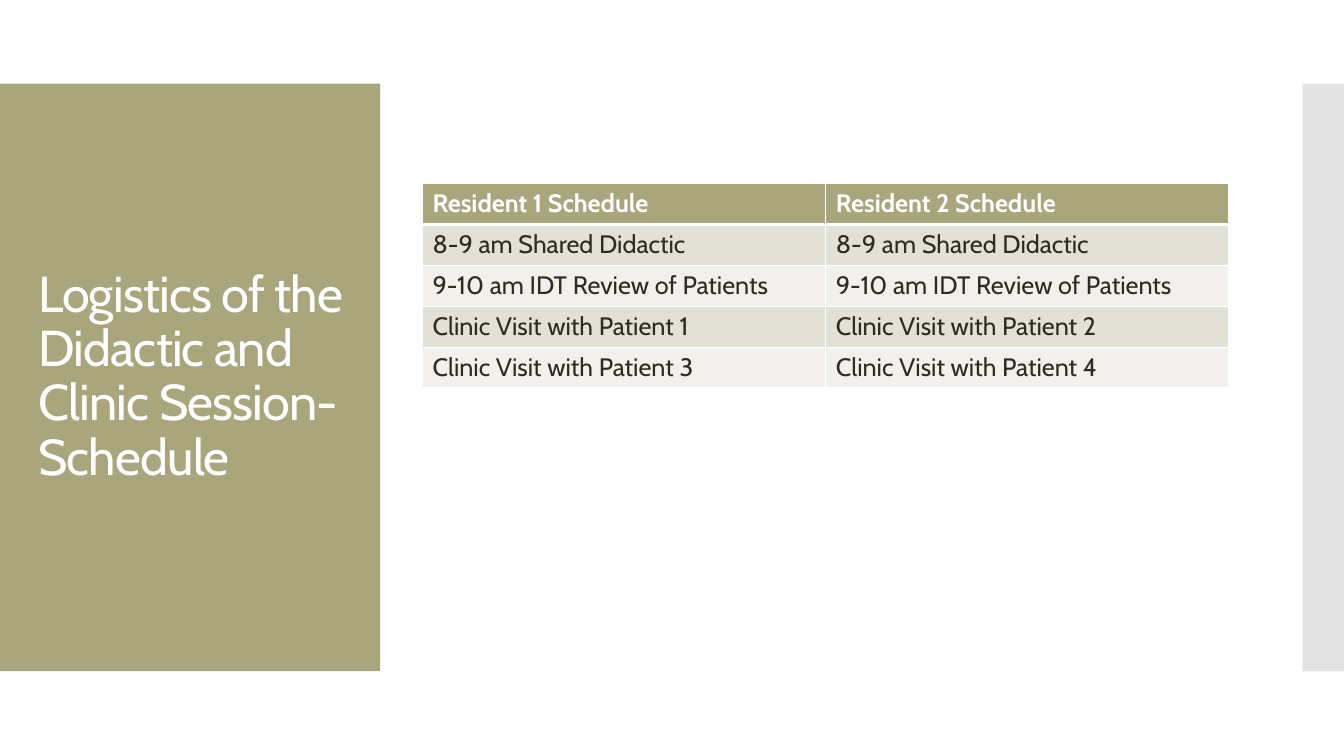
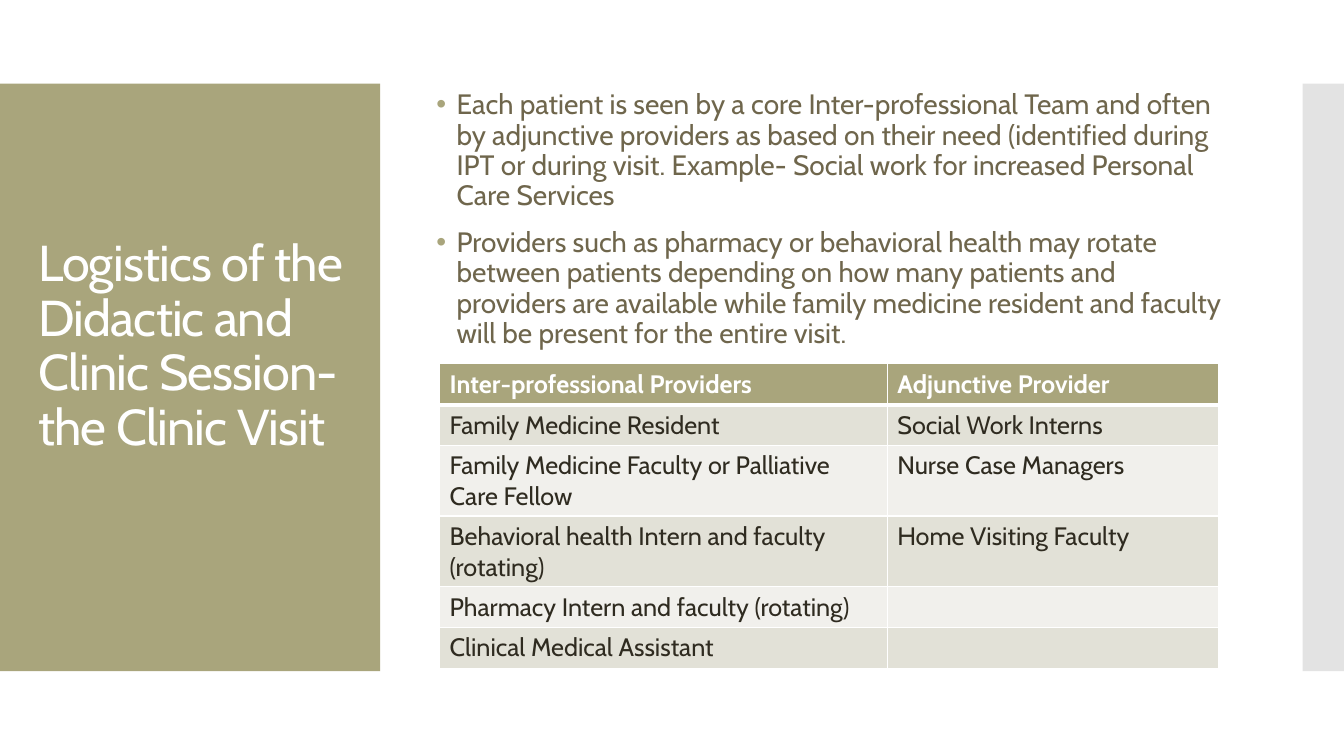
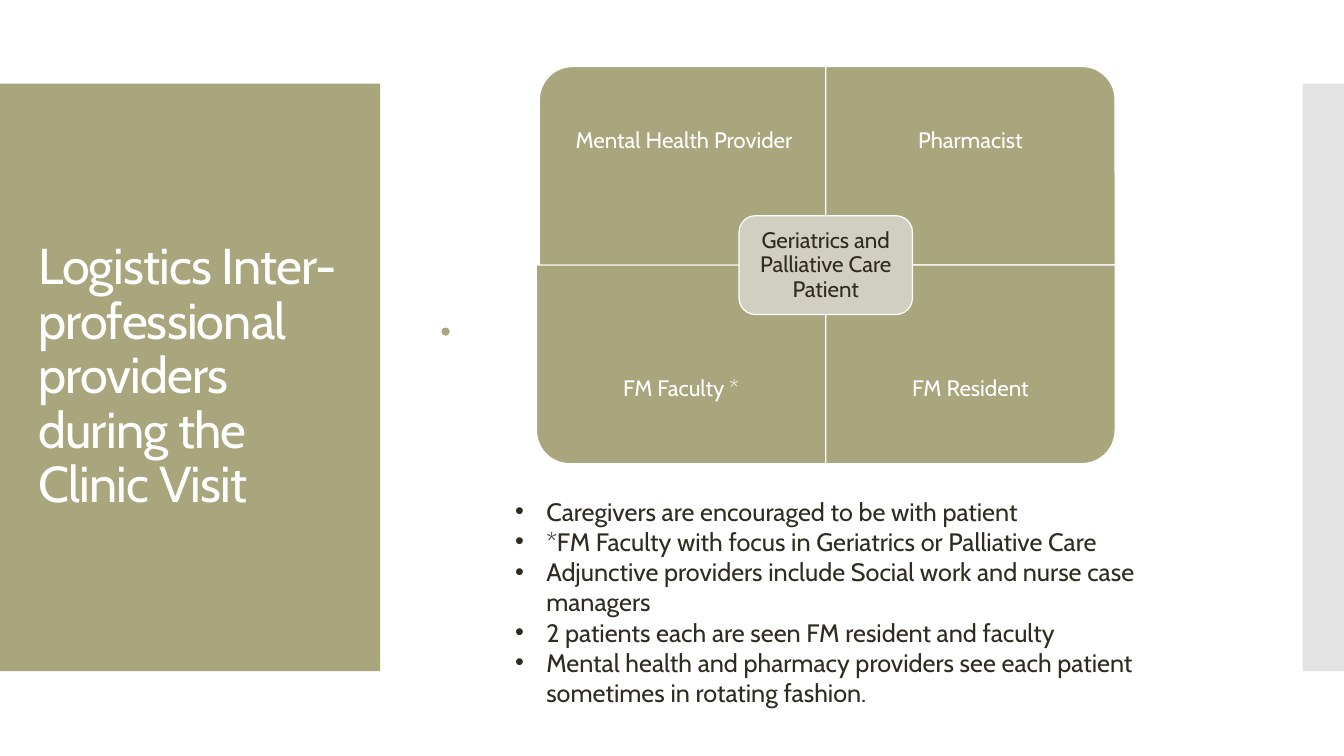
from lxml.etree import SubElement
from pptx import Presentation
from pptx.dml.color import RGBColor
from pptx.enum.shapes import MSO_SHAPE
from pptx.enum.text import MSO_ANCHOR, PP_ALIGN
from pptx.oxml.ns import qn
from pptx.util import Inches, Pt

OLIVE, DARK, BROWN, WHITE = "A9A57C", "2F2B20", "6F664C", "FFFFFF"
GREY, STONE, ODD, EVEN = "C8C8C8", "D1CFBF", "E2E1D7", "F1F0EC"


def tint(code):
    return RGBColor.from_string(code)


class Deck:
    """Hold the shared style and the current slide."""

    def __init__(self):
        self.deck = Presentation()
        self.deck.slide_width, self.deck.slide_height = Inches(13.33), Inches(7.5)
        self.font = "Cabin"

    def page(self, title, height=5.03):
        self.slide = self.deck.slides.add_slide(self.deck.slide_layouts[6])
        self.shape(MSO_SHAPE.RECTANGLE, 0, 0.83, 3.77, 5.83, OLIVE)
        strip = self.shape(MSO_SHAPE.RECTANGLE, 12.92, 0.83, 0.41, 5.83, GREY)
        shade = strip.fill._xPr.find(".//" + qn("a:srgbClr"))
        SubElement(shade, qn("a:alpha"), val="50000")
        frame = self.text([title], 0.28, 1.23, 3.22, height, 36, WHITE, 0.9)
        frame.vertical_anchor = MSO_ANCHOR.MIDDLE
        frame.paragraphs[0].runs[0].font._element.set("spc", "-60")

    def shape(self, kind, left, top, width, height, fill, line=None, turn=0):
        shape = self.slide.shapes.add_shape(
            kind, Inches(left), Inches(top), Inches(width), Inches(height))
        shape.shadow.inherit = False
        shape.rotation = turn
        shape.fill.solid()
        shape.fill.fore_color.rgb = tint(fill)
        if line:
            shape.line.color.rgb = tint(line)
            shape.line.width = Pt(0.85)
        else:
            shape.line.fill.background()
        return shape

    def style(self, par, size, color, bold=False):
        for run in par.runs:
            run.font.name, run.font.size = self.font, Pt(size)
            run.font.bold = bold
            run.font.color.rgb = tint(color)

    def text(self, lines, left, top, width, height, size, color, space=1.0):
        box = self.slide.shapes.add_textbox(
            Inches(left), Inches(top), Inches(width), Inches(height))
        frame = box.text_frame
        frame.word_wrap = True
        frame.text = "\n".join(lines)
        for par in frame.paragraphs:
            par.line_spacing = space
            self.style(par, size, color)
        return frame

    def label(self, words, left, top, width, height, color, inset):
        frame = self.text([words], left, top, width, height, 16, color, 0.9)
        frame.vertical_anchor = MSO_ANCHOR.MIDDLE
        frame.margin_left = frame.margin_right = Inches(inset)
        frame.margin_top = frame.margin_bottom = Inches(inset)
        frame.paragraphs[0].alignment = PP_ALIGN.CENTER

    def list(self, lines, left, top, width, height, size, color, dot,
             indent, space=1.0, gap=0):
        frame = self.text(lines, left, top, width, height, size, color, space)
        for par in frame.paragraphs:
            props = par._p.get_or_add_pPr()
            props.set("marL", str(Inches(indent)))
            props.set("indent", str(-Inches(indent)))
            shade = SubElement(props, qn("a:buClr"))
            SubElement(shade, qn("a:srgbClr"), val=dot)
            SubElement(props, qn("a:buFont"), typeface="Arial")
            SubElement(props, qn("a:buChar"), char="•")
        for par in frame.paragraphs[1:]:
            par.space_before = Pt(gap)

    def edge(self, cell, side, width):
        line = SubElement(cell._tc.get_or_add_tcPr(), qn("a:ln" + side),
                          w=str(Pt(width)))
        fill = SubElement(line, qn("a:solidFill"))
        SubElement(fill, qn("a:srgbClr"), val=WHITE)

    def table(self, rows, left, top, widths, height):
        grid = self.slide.shapes.add_table(
            len(rows), len(widths), Inches(left), Inches(top),
            Inches(sum(widths)), Inches(height)).table
        for col, width in zip(grid.columns, widths):
            col.width = Inches(width)
        for y, row in enumerate(rows):
            for x, words in enumerate(row):
                cell = grid.cell(y, x)
                cell.text = words
                for side in "LRTB":
                    thick = (y, side) in ((0, "B"), (1, "T"))
                    self.edge(cell, side, 3 if thick else 1)
                cell.fill.solid()
                fill = OLIVE if y == 0 else ODD if y % 2 else EVEN
                cell.fill.fore_color.rgb = tint(fill)
                par = cell.text_frame.paragraphs[0]
                par.font.size = Pt(18)
                self.style(par, 18, DARK if y else WHITE, y == 0)

    def petal(self, words, left, top, turn, shift):
        wide, high = 2.87, 1.97
        width, height = (high, wide) if turn % 180 else (wide, high)
        self.shape(MSO_SHAPE.ROUND_1_RECTANGLE, left + (wide - width) / 2,
                   top + (high - height) / 2, width, height, OLIVE, WHITE, turn)
        self.label(words, left, top + shift, wide, 1.48, WHITE, 0.12)


def main():
    deck = Deck()

    deck.page("Logistics of the Didactic and Clinic Session- Schedule")
    deck.table([
        ("Resident 1 Schedule", "Resident 2 Schedule"),
        ("8-9 am Shared Didactic",) * 2,
        ("9-10 am IDT Review of Patients",) * 2,
        ("Clinic Visit with Patient 1", "Clinic Visit with Patient 2"),
        ("Clinic Visit with Patient 3", "Clinic Visit with Patient 4"),
    ], 4.19, 1.82, (4, 4), 2.03)

    deck.page("Logistics of the Didactic and Clinic Session- the Clinic Visit", 4.43)
    deck.list([
        "Each patient is seen by a core Inter-professional Team and often by "
        "adjunctive providers as based on their need (identified during IPT or "
        "during visit. Example- Social work for increased Personal Care Services",
        "Providers such as pharmacy or behavioral health may rotate between "
        "patients depending on how many patients and providers are available "
        "while family medicine resident and faculty will be present for the "
        "entire visit.",
    ], 4.23, 0.85, 8, 2.7, 20, BROWN, OLIVE, 0.2, 0.9, 12)
    deck.table([
        ("Inter-professional Providers", "Adjunctive Provider"),
        ("Family Medicine Resident", "Social Work Interns"),
        ("Family Medicine Faculty or Palliative Care Fellow", "Nurse Case Managers"),
        ("Behavioral health Intern and faculty (rotating)", "Home Visiting Faculty"),
        ("Pharmacy Intern and faculty (rotating)", ""),
        ("Clinical Medical Assistant", ""),
    ], 4.36, 3.61, (4.44, 3.29), 2.43)

    deck.page("Logistics Inter-professional providers during the Clinic Visit")
    deck.shape(MSO_SHAPE.OVAL, 4.38, 3.25, 0.08, 0.08, OLIVE)
    for petal in (
        ("Mental Health Provider", 5.35, 0.66, 270, 0),
        ("Pharmacist", 8.19, 0.66, 0, 0),
        ("FM Faculty *", 5.32, 2.63, 180, 0.49),
        ("FM Resident", 8.19, 2.63, 90, 0.49),
    ):
        deck.petal(*petal)
    deck.shape(MSO_SHAPE.ROUNDED_RECTANGLE, 7.33, 2.14, 1.72, 0.98, STONE, WHITE)
    deck.label("Geriatrics and Palliative Care Patient",
               7.38, 2.19, 1.62, 0.89, DARK, 0.07)
    deck.list([
        "Caregivers are encouraged to be with patient",
        "*FM Faculty with focus in Geriatrics or Palliative Care",
        "Adjunctive providers include Social work and nurse case managers",
        "2 patients each are seen FM resident and faculty",
        "Mental health and pharmacy providers see each patient sometimes in "
        "rotating fashion.",
    ], 5.01, 4.87, 6.81, 2.22, 18, DARK, DARK, 0.31)

    deck.deck.save("out.pptx")


if __name__ == "__main__":
    main()
